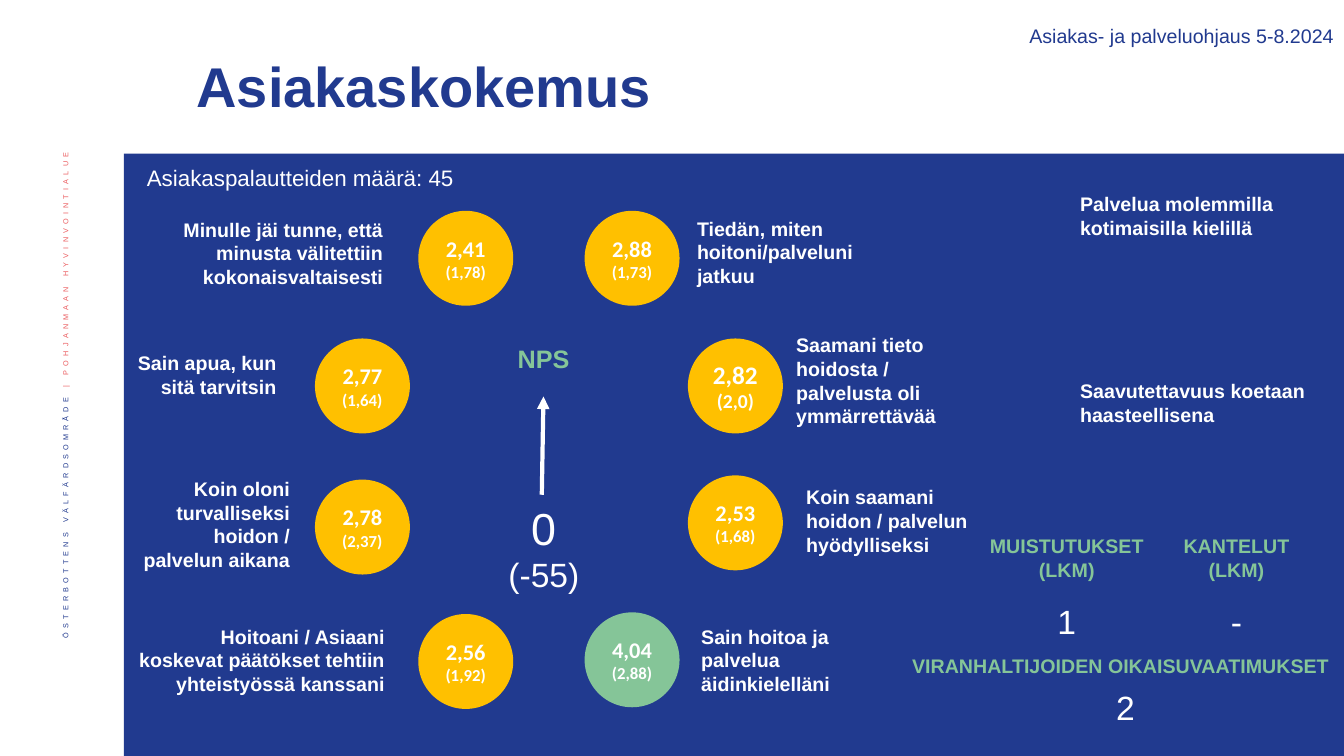
from pptx import Presentation
from pptx.dml.color import RGBColor
from pptx.enum.shapes import MSO_SHAPE as Form, MSO_CONNECTOR as Link
from pptx.enum.text import PP_ALIGN as Al, MSO_ANCHOR as Anc, MSO_AUTO_SIZE as Fit
from pptx.oxml.ns import qn
from pptx.util import Inches, Pt
from lxml.etree import SubElement as Sub

BLUE, WHITE, GOLD = "213A8F", "FFFFFF", "FFC000"
GREEN, RED = "85C598", "EB5C5F"
COLS, ROWS = 160, 90  # grid over the whole slide


def tint(code):
    return RGBColor.from_string(code)


def write(para, text, size=14, color=WHITE, bold=False, face="Arial"):
    run = para.add_run()
    run.text = text
    font = run.font
    font.size, font.bold, font.name = Pt(size), bold, face
    font.color.rgb = tint(color)
    return run


class Board:
    def __init__(self, deck):
        self.slide = deck.slides.add_slide(deck.slide_layouts[5])
        self.shapes = self.slide.shapes
        self.col = deck.slide_width / COLS
        self.row = deck.slide_height / ROWS

    def area(self, x, y, w, h):
        return [round(v) for v in (x * self.col, y * self.row,
                                   w * self.col, h * self.row)]

    def title(self, text, x, y, w, h):
        box = self.shapes.title
        box.left, box.top, box.width, box.height = self.area(x, y, w, h)
        frame = box.text_frame
        frame.auto_size, frame.vertical_anchor = Fit.NONE, Anc.MIDDLE
        para = frame.paragraphs[0]
        para.alignment, para.line_spacing = Al.LEFT, 0.9
        write(para, text, size=40, color=BLUE, bold=True)

    def shape(self, form, x, y, w, h, fill):
        item = self.shapes.add_shape(form, *self.area(x, y, w, h))
        item.shadow.inherit = False
        item.fill.solid()
        item.fill.fore_color.rgb = tint(fill)
        item.line.fill.background()
        return item

    def text(self, words, x, y, w, h, align=Al.LEFT, gap=0, **style):
        """Each entry of words is a paragraph, or a (paragraph, size) pair."""
        frame = self.shapes.add_textbox(*self.area(x, y, w, h)).text_frame
        frame.word_wrap = True
        for i, word in enumerate(words):
            para = frame.add_paragraph() if i else frame.paragraphs[0]
            para.alignment = align
            if i and gap:
                para.space_before = Pt(gap)
            if isinstance(word, tuple):
                word, style["size"] = word
            write(para, word, **style)

    def disc(self, x, y, now, past, fill=GOLD, size=16):
        frame = self.shape(Form.OVAL, x, y, 11.3, 11.3, fill).text_frame
        frame.word_wrap, frame.vertical_anchor = True, Anc.MIDDLE
        para = frame.paragraphs[0]
        para.alignment = Al.CENTER
        write(para, now + " ", size=size, bold=True, face="Calibri")
        write(para, f"({past})", size=size - 4, bold=True, face="Calibri")

    def arrow(self, x1, y1, x2, y2):
        ends = self.area(x1, y1, x2, y2)
        line = self.shapes.add_connector(Link.STRAIGHT, *ends)
        line.line.color.rgb, line.line.width = tint(WHITE), Pt(3)
        Sub(line.line._get_or_add_ln(), qn("a:tailEnd"), type="triangle")
        Sub(line._element.spPr, qn("a:effectLst"))

    def side(self, parts, x, y, w, h):
        frame = self.shapes.add_textbox(*self.area(x, y, w, h)).text_frame
        frame.word_wrap, frame.vertical_anchor = True, Anc.MIDDLE
        frame._txBody.bodyPr.set("vert", "vert270")
        para = frame.paragraphs[0]
        para.alignment, para.line_spacing = Al.RIGHT, 0.9
        for text, color in parts:
            props = write(para, text, size=9, color=color).font._element
            props.set("baseline", "30000")
            props.set("spc", "300")


def main():
    deck = Presentation()
    deck.slide_width, deck.slide_height = Inches(13.333), Inches(7.5)
    board = Board(deck)

    # Frame and headings
    board.side([("ÖSTERBOTTENS VÄLFÄRDSOMRÅDE ", BLUE),
                ("| POHJANMAAN HYVINVOINTIALUE", RED)], 5, 17, 6.2, 68.8)
    board.shape(Form.RECTANGLE, 14.75, 18.3, 145.25, 71.7, BLUE)
    board.title("Asiakaskokemus", 22.2, 5.6, 122.4, 10.2)
    board.text(["Asiakas- ja palveluohjaus 5-8.2024"], 62.65, 2.2, 97.35, 4,
               align=Al.RIGHT, color=BLUE)
    board.text(["Asiakaspalautteiden määrä: 45"], 16.3, 19, 52.2, 4.4, size=16)

    # NPS score
    board.text(["NPS"], 60.1, 40.3, 9.2, 4.8, align=Al.CENTER,
               size=18, color=GREEN, bold=True)
    board.arrow(64.5, 58.9, 64.7, 47.2)
    board.text([("0", 32), ("(-55)", 24)], 52.7, 59, 24.1, 12.5,
               align=Al.CENTER)

    # Survey claims: text, left, top, width, lines
    left = [
        ("Minulle jäi tunne, että minusta välitettiin kokonaisvaltaisesti",
         19.3, 25.3, 27.5, 3),
        ("Sain apua, kun sitä tarvitsin", 14.8, 41.2, 19.3, 2),
        ("Koin oloni turvalliseksi hoidon / palvelun aikana",
         14.8, 56.2, 20.9, 4),
        ("Hoitoani / Asiaani koskevat päätökset tehtiin yhteistyössä kanssani",
         14.8, 73.8, 32.2, 3),
    ]
    right = [
        ("Tiedän, miten hoitoni/palveluni jatkuu", 81.8, 25.2, 23, 3),
        ("Saamani tieto hoidosta / palvelusta oli ymmärrettävää",
         93.6, 39.1, 23, 4),
        ("Koin saamani hoidon / palvelun hyödylliseksi", 94.8, 57.2, 24.1, 3),
        ("Sain hoitoa ja palvelua äidinkielelläni", 82.3, 73.8, 22.2, 3),
    ]
    for claims, align in ((left, Al.RIGHT), (right, Al.LEFT)):
        for claim, x, y, w, lines in claims:
            board.text([claim], x, y, w, 2.8 * lines + 1.2,
                       align=align, bold=True)

    # Scores, with the earlier ones in brackets
    board.disc(49.8, 25.1, "2,41", "1,78")
    board.disc(37.5, 40.3, "2,77", "1,64")
    board.disc(37.5, 57.1, "2,78", "2,37")
    board.disc(49.8, 73.1, "2,56", "1,92")
    board.disc(69.6, 25.1, "2,88", "1,73")
    board.disc(81.9, 40.3, "2,82", "2,0", size=18)
    board.disc(81.9, 56.6, "2,53", "1,68")
    board.disc(69.6, 72.9, "4,04", "2,88", fill=GREEN)

    # Remarks
    board.text(["Palvelua molemmilla kotimaisilla kielillä",
                "Saavutettavuus koetaan haasteellisena"],
               127.4, 22.3, 30.6, 32.3, gap=100, bold=True)

    # Complaint counts
    for x, head, count in ((116, "MUISTUTUKSET (LKM)", "1"),
                           (136.2, "KANTELUT (LKM)", "-")):
        board.text([head], x, 63, 22, 6.8, align=Al.CENTER,
                   color=GREEN, bold=True)
        board.text([count], x + 1.8, 70.9, 18.4, 6, align=Al.CENTER, size=24)
    board.text(["VIRANHALTIJOIDEN OIKAISUVAATIMUKSET"], 107.4, 77.2, 52.6, 4,
               color=GREEN, bold=True)
    board.text(["2"], 131.7, 81.2, 8.9, 6, size=24)

    deck.save("out.pptx")


if __name__ == "__main__":
    main()
